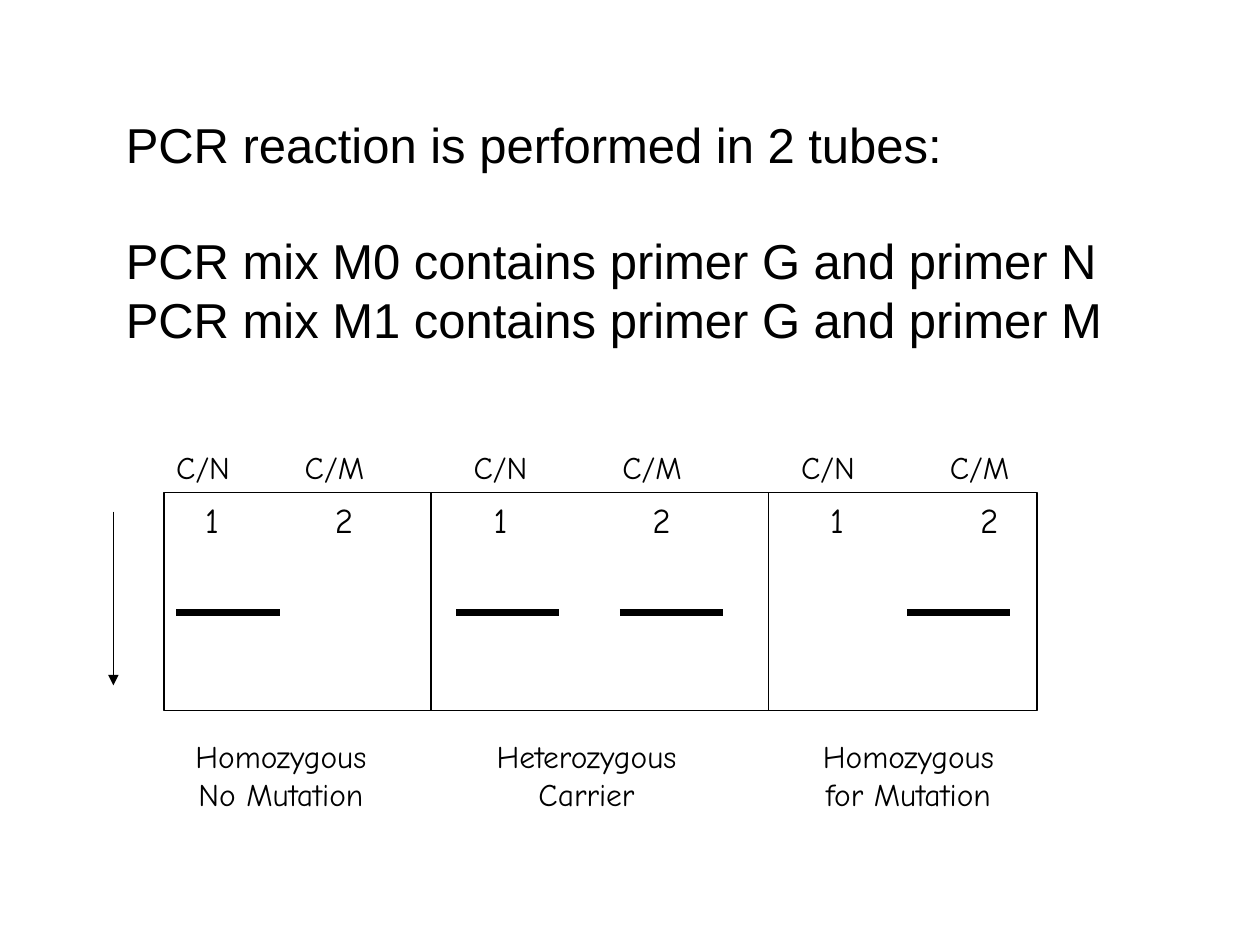
"""Build a slide showing PCR gel bands for three genotypes."""
from lxml import etree
from pptx import Presentation, util as u
from pptx.dml.color import RGBColor
from pptx.enum import shapes, text
from pptx.oxml.ns import qn

COLORS = {"ink": "000000"}
HAND, SANS = "Comic Neue", "Arial"
GEL_LEFT, GEL_TOP, GEL_WIDTH, GEL_HEIGHT = 1.3, 3.91, 6.93, 1.73
GEL_BOTTOM = GEL_TOP + GEL_HEIGHT
DIVIDERS = [3.42, 6.1]
BAND_Y, BAND_WIDTH = 4.86, 0.82
HEADING = [
    "PCR reaction is performed in 2 tubes:",
    "PCR mix M0 contains primer G and primer N",
    "PCR mix M1 contains primer G and primer M",
]
LANES = [
    ("C/N", 1.3, "1", 1.53, 1.4),
    ("C/M", 2.32, "2", 2.56, None),
    ("C/N", 3.66, "1", 3.82, 3.62),
    ("C/M", 4.84, "2", 5.08, 4.92),
    ("C/N", 6.26, "1", 6.49, None),
    ("C/M", 7.44, "2", 7.68, 7.2),
]
GENOTYPES = [
    (["Homozygous", "No Mutation"], 1.38, 1.7),
    (["Heterozygous", "Carrier"], 3.74, 1.83),
    (["Homozygous", "for Mutation"], 6.34, 1.74),
]


def ink():
    return RGBColor.from_string(COLORS["ink"])


def add_text(page, lines, left, top, width, height, size=18, font=HAND,
             align=text.PP_ALIGN.LEFT, wrap=False, pitch=None):
    box = page.shapes.add_textbox(*map(u.Inches, (left, top, width, height)))
    frame = box.text_frame
    frame.word_wrap = wrap
    for index, line in enumerate(lines):
        para = frame.paragraphs[0] if index == 0 else frame.add_paragraph()
        para.alignment = align
        if pitch:
            para.line_spacing = u.Pt(pitch)
        span = para.add_run()
        span.text = line
        span.font.size = u.Pt(size)
        span.font.name = font
        span.font.color.rgb = ink()
    return frame


def add_line(page, x1, y1, x2, y2, weight, arrow=False):
    line = page.shapes.add_connector(
        shapes.MSO_CONNECTOR.STRAIGHT, *map(u.Inches, (x1, y1, x2, y2)))
    line.line.color.rgb = ink()
    line.line.width = u.Pt(weight)
    properties = line._element.spPr
    if arrow:
        etree.SubElement(properties.find(qn("a:ln")), qn("a:tailEnd"), type="triangle")
    etree.SubElement(properties, qn("a:effectLst"))


def add_gel(page):
    gel = page.shapes.add_shape(
        shapes.MSO_SHAPE.RECTANGLE,
        *map(u.Inches, (GEL_LEFT, GEL_TOP, GEL_WIDTH, GEL_HEIGHT)))
    gel.shadow.inherit = False
    gel.fill.background()
    gel.line.color.rgb = ink()
    gel.line.width = u.Pt(1)
    for x in DIVIDERS:
        add_line(page, x, GEL_TOP, x, GEL_BOTTOM, 0.75)
    add_line(page, 0.9, GEL_TOP + 0.15, 0.9, GEL_BOTTOM - 0.2, 1, arrow=True)


def add_lane(page, primers, primers_left, number, number_left, band_left):
    add_text(page, [primers], primers_left, GEL_TOP - 0.4, 0.69, 0.4)
    add_text(page, [number], number_left, GEL_TOP, 0.35, 0.43, size=20)
    if band_left is not None:
        add_line(page, band_left, BAND_Y, band_left + BAND_WIDTH, BAND_Y, 4)


def main():
    deck = Presentation()
    deck.slide_width, deck.slide_height = u.Inches(10), u.Inches(7.5)
    page = deck.slides.add_slide(deck.slide_layouts.get_by_name("Blank"))
    heading = add_text(page, HEADING, 0.9, 0.86, 8.14, 2.46, size=28,
                       font=SANS, wrap=True, pitch=33.4)
    heading.paragraphs[1].space_before = u.Pt(33.4)
    add_gel(page)
    for lane in LANES:
        add_lane(page, *lane)
    for lines, left, width in GENOTYPES:
        add_text(page, lines, left, 5.8, width, 0.7, align=text.PP_ALIGN.CENTER)
    deck.save("out.pptx")


if __name__ == "__main__":
    main()
